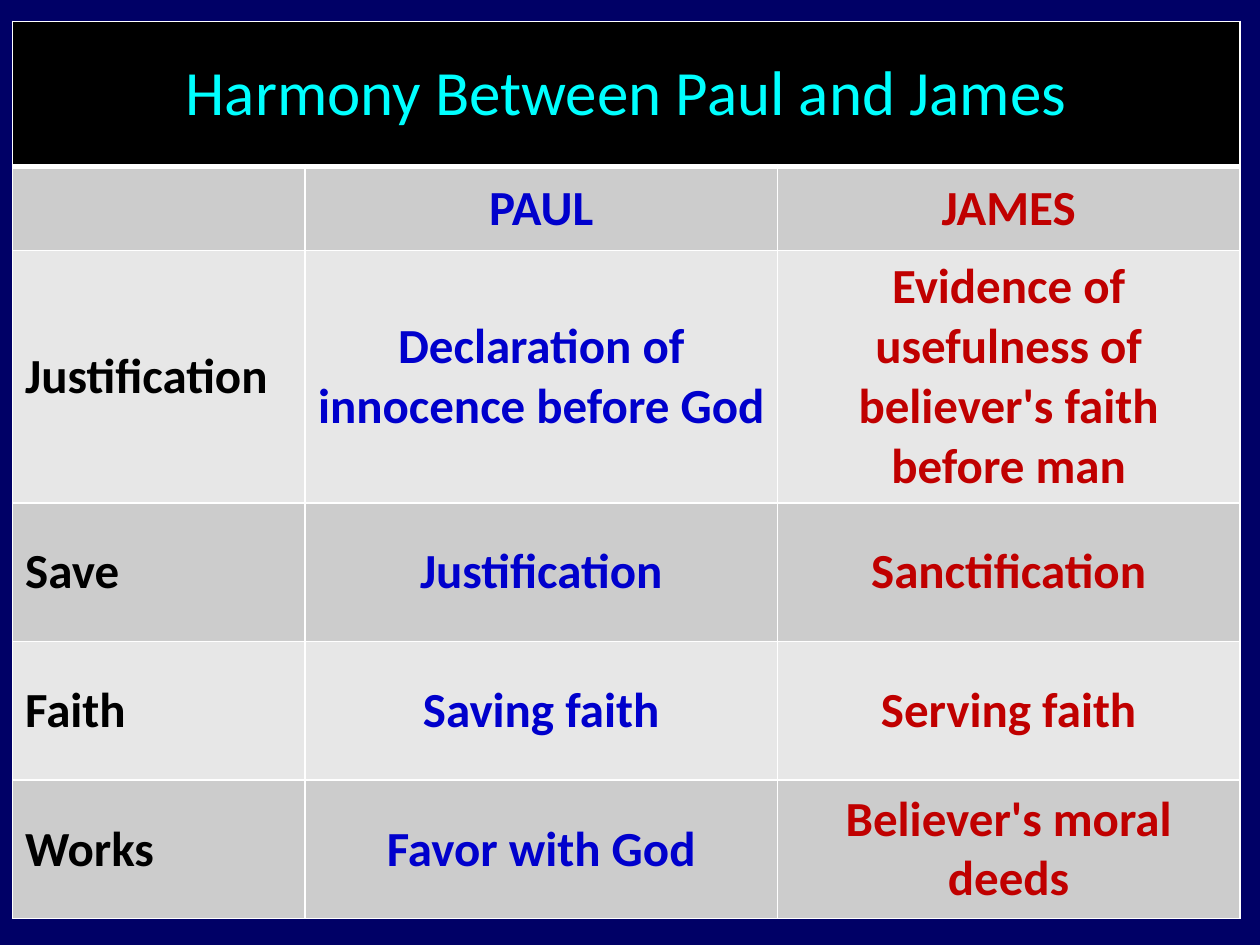
"""Build a slide with a table comparing Paul and James."""
from lxml import etree
from pptx import Presentation
from pptx import util as u
from pptx.dml.color import RGBColor
from pptx.enum import text
from pptx.oxml import ns

COLORS = {
    "page": "000066", "header": "000000", "title": "00FFFF",
    "topic": "000000", "paul": "0000CC", "james": "C00000",
    "dark": "CCCCCC", "light": "E7E7E7", "border": "FFFFFF",
}
TITLE = "Harmony Between Paul and James"
ROWS = [
    ("", "PAUL", "JAMES"),
    ("Justification", "Declaration of innocence before God",
     "Evidence of usefulness of believer's faith before man"),
    ("Save", "Justification", "Sanctification"),
    ("Faith", "Saving faith", "Serving faith"),
    ("Works", "Favor with God", "Believer's moral deeds"),
]
COLUMN_WIDTHS = [2.32, 3.75, 3.67]
ROW_HEIGHTS = [1.15, 0.67, 2.0] + [1.1] * 3
COLUMN_COLORS = ["topic", "paul", "james"]
TITLE_FORMAT = {"name": "Calibri", "size": u.Pt(36), "bold": False}
BODY_FORMAT = {"name": "Calibri", "size": u.Pt(28), "bold": True}


def rgb(name):
    """Return the named colour."""
    return RGBColor.from_string(COLORS[name])


def add_border(cell, side, points):
    """Draw a solid line along one side of a cell."""
    line = etree.SubElement(cell._tc.get_or_add_tcPr(), ns.qn(f"a:ln{side}"),
                            w=str(u.Pt(points)))
    fill = etree.SubElement(line, ns.qn("a:solidFill"))
    etree.SubElement(fill, ns.qn("a:srgbClr"), val=COLORS["border"])


def style_cell(cell, fill, top=1, bottom=1):
    """Set the borders, fill and anchor of a cell."""
    for side, points in {"L": 1, "R": 1, "T": top, "B": bottom}.items():
        add_border(cell, side, points)
    cell.fill.solid()
    cell.fill.fore_color.rgb = rgb(fill)
    cell.vertical_anchor = text.MSO_ANCHOR.MIDDLE


def write_cell(cell, words, color, font_format, align):
    """Write one formatted paragraph in a cell."""
    para = cell.text_frame.paragraphs[0]
    para.alignment = align
    span = para.add_run()
    span.text = words
    for name, value in font_format.items():
        setattr(span.font, name, value)
    span.font.color.rgb = rgb(color)


def add_grid(page):
    """Add an empty table with the planned columns and rows."""
    sizes = [u.Inches(sum(lengths)) for lengths in (COLUMN_WIDTHS, ROW_HEIGHTS)]
    table = page.shapes.add_table(len(ROW_HEIGHTS), len(COLUMN_WIDTHS),
                                  u.Inches(0.1), u.Inches(0.17), *sizes).table
    for column, width in zip(table.columns, COLUMN_WIDTHS):
        column.width = u.Inches(width)
    for row, height in zip(table.rows, ROW_HEIGHTS):
        row.height = u.Inches(height)
    return table


def fill_title(table):
    """Merge the first row and write the title in it."""
    cells = table.rows[0].cells
    for cell in cells:
        style_cell(cell, "header", bottom=3)
    table.cell(0, 0).merge(table.cell(0, len(COLUMN_WIDTHS) - 1))
    write_cell(table.cell(0, 0), TITLE, "title", TITLE_FORMAT, text.PP_ALIGN.CENTER)


def fill_body(table):
    """Write the comparison in rows of alternating fill."""
    for row, entries in enumerate(ROWS, start=1):
        for column, words in enumerate(entries):
            cell = table.cell(row, column)
            style_cell(cell, "dark" if row % 2 else "light", top=3 if row == 1 else 1)
            align = text.PP_ALIGN.CENTER if column else text.PP_ALIGN.LEFT
            if words:
                write_cell(cell, words, COLUMN_COLORS[column], BODY_FORMAT, align)


def main():
    """Build and save the deck."""
    deck = Presentation()
    deck.slide_width, deck.slide_height = u.Inches(10), u.Inches(7.5)
    page = deck.slides.add_slide(deck.slide_layouts[6])
    page.background.fill.solid()
    page.background.fill.fore_color.rgb = rgb("page")
    table = add_grid(page)
    fill_title(table)
    fill_body(table)
    deck.save("out.pptx")


if __name__ == "__main__":
    main()
